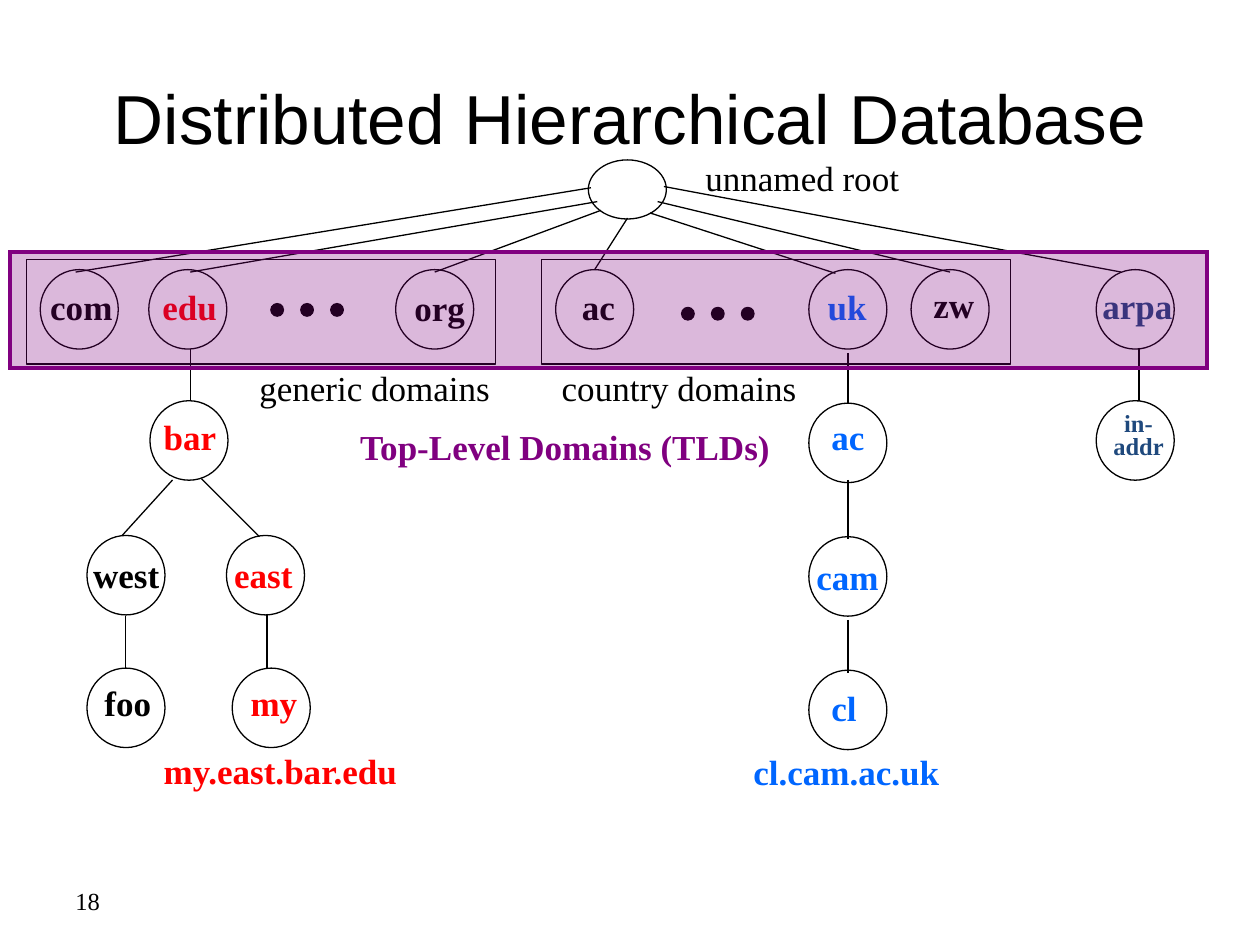
import lxml.etree
import pptx
import pptx.dml.color
import pptx.enum.shapes
import pptx.enum.text
import pptx.oxml.ns
import pptx.util

Pt = pptx.util.Pt
SHAPE = pptx.enum.shapes.MSO_SHAPE
ALIGN = pptx.enum.text.PP_ALIGN
ANCHOR = pptx.enum.text.MSO_ANCHOR
FIT = pptx.enum.text.MSO_AUTO_SIZE

COLORS = {
    "black": "000000",
    "red": "FF0000",
    "blue": "0066FF",
    "navy": "1F497D",
    "purple": "800080",
}

BODY = {"name": "Times New Roman", "size": Pt(20), "bold": False}
BOLD = {**BODY, "bold": True}
SMALL = {**BODY, "size": Pt(14)}
SMALL_BOLD = {**BOLD, "size": Pt(14)}
TITLE = {"name": "Arial", "size": Pt(39.6), "bold": False}
CENTER = {"alignment": ALIGN.CENTER}
TIGHT = {"alignment": ALIGN.CENTER, "line_spacing": 0.8}
FIXED = {"word_wrap": True, "vertical_anchor": ANCHOR.MIDDLE}
GROW = {"word_wrap": False, "auto_size": FIT.SHAPE_TO_FIT_TEXT}

NODE_W, NODE_H = 44.6, 45.4
LABEL_H = 31
TLD_Y = 154.1
UK_X, UK_Y, UK_STEP = 462.2, 230.4, 76.3
DOT, DOT_STEP = 7.2, 17.1

NODES = [
    ("com", "black", 23, TLD_Y, 21.6, 159.8, 51),
    ("edu", "red", 85, TLD_Y, 85.7, 159.8, 45.4),
    ("org", "black", 226.1, TLD_Y, 229.7, 160.2, 43.9),
    ("ac", "black", 317.5, TLD_Y, 325.4, 159.8, 33.1),
    ("uk", "blue", UK_X, TLD_Y, 465.8, 159.8, 36.7),
    ("zw", "black", 520.6, TLD_Y, 526.3, 158.4, 38.2),
    ("arpa", "navy", 626.4, TLD_Y, 622.8, 159.1, 54.7),
    ("bar", "red", 85.7, 229, 86.4, 234, 44.6),
    ("west", "black", 49.7, 306, 46.1, 312.5, 54),
    ("east", "red", 129.4, 306, 126.7, 312.5, 49),
    ("foo", "black", 49.7, 381.8, 52.6, 385.9, 41),
    ("my", "red", 132.7, 381.8, 136.1, 385.9, 41.8),
    ("ac", "blue", UK_X, UK_Y, 468, 234, 33.1),
    ("cam", "blue", UK_X, UK_Y + UK_STEP, 459.4, 313.9, 51),
    ("cl", "blue", UK_X, UK_Y + 2 * UK_STEP, 468, 388.8, 28.8),
]

BRANCHES = [
    (337.7, 107.3, 43.2, 155.5),
    (341.3, 115.2, 108.7, 155.5),
    (343.4, 120.2, 248.4, 155.5),
    (358.6, 124.6, 339.8, 154.1),
    (379.4, 106.6, 640.8, 155.5),
    (375.8, 115.2, 542.9, 155.5),
    (371.5, 121.7, 477.4, 156.2),
    (108.7, 199.4, 108.7, 229),
    (98.6, 274.3, 69.8, 306),
    (115.2, 273.6, 148.3, 306.7),
    (71.8, 352.1, 71.8, 382),
    (152.6, 350.6, 152.6, 382),
    (484.6, 201.6, 484.6, 230.4),
    (484.6, 274.3, 484.6, 308.2),
    (484.6, 354.2, 484.6, 384.5),
    (650.9, 198.7, 650.9, 229),
]

CAPTIONS = [
    ("unnamed root", "black", 396, 85.7, 125.3, BODY),
    ("generic domains", "black", 141.1, 205.9, 146.2, BODY),
    ("country domains", "black", 313.9, 205.9, 148.3, BODY),
    ("my.east.bar.edu", "red", 86.4, 424.8, 150.5, BOLD),
    ("cl.cam.ac.uk", "blue", 423.4, 425.5, 121.7, BOLD),
]


def rgb(color):
    return pptx.dml.color.RGBColor.from_string(COLORS[color])


def apply(obj, values):
    for name, value in values.items():
        setattr(obj, name, value)


def add_text(s, lines, color, box, font, para={}, frame=GROW):
    tf = s.shapes.add_textbox(*map(Pt, box)).text_frame
    apply(tf, frame)
    for i, line in enumerate(lines):
        p = tf.add_paragraph() if i else tf.paragraphs[0]
        apply(p, para)
        r = p.add_run()
        r.text = line
        apply(r.font, font)
        r.font.color.rgb = rgb(color)


def add_outline(shapes, kind, box, fill=None, line="black", width=0.75):
    sp = shapes.add_shape(kind, *map(Pt, box))
    sp.shadow.inherit = False
    if fill:
        sp.fill.solid()
        sp.fill.fore_color.rgb = rgb(fill)
    else:
        sp.fill.background()
    sp.line.color.rgb = rgb(line)
    sp.line.width = Pt(width)
    return sp


def add_node(s, label, color, x, y, label_x, label_y, label_w):
    add_outline(s.shapes, SHAPE.OVAL, (x, y, NODE_W, NODE_H))
    add_text(s, [label], color, (label_x, label_y, label_w, LABEL_H), BOLD)


def add_dots(s, x, y):
    group = s.shapes.add_group_shape()
    for i in range(3):
        add_outline(group.shapes, SHAPE.OVAL, (x + i * DOT_STEP, y, DOT, DOT), "black")


def add_branch(s, ends):
    line = s.shapes.add_connector(
        pptx.enum.shapes.MSO_CONNECTOR.STRAIGHT, *map(Pt, ends))
    line.line.color.rgb = rgb("black")
    line.line.width = Pt(0.75)
    lxml.etree.SubElement(line._element.spPr, pptx.oxml.ns.qn("a:effectLst"))


def add_band(s, box, percent):
    sp = add_outline(s.shapes, SHAPE.RECTANGLE, box, "purple", "purple", 2)
    qn = pptx.oxml.ns.qn
    spPr = sp._element.spPr
    color = spPr.find(qn("a:solidFill")).find(qn("a:srgbClr"))
    lxml.etree.SubElement(color, qn("a:alpha")).set("val", str(percent * 1000))
    lxml.etree.SubElement(spPr.find(qn("a:ln")), qn("a:miter")).set("lim", "800000")


def main():
    prs = pptx.Presentation()
    prs.slide_width, prs.slide_height = Pt(720), Pt(540)
    s = prs.slides.add_slide(prs.slide_layouts[6])

    add_text(s, ["18"], "black", (36, 500.4, 168, 28.8), SMALL, frame=FIXED)
    add_text(s, ["Distributed Hierarchical Database"], "black",
             (36, 21.6, 648, 90), TITLE, CENTER, FIXED)

    for x in (15.1, 309.6):
        add_outline(s.shapes, SHAPE.RECTANGLE, (x, 148.3, 268, 59.8))
    add_outline(s.shapes, SHAPE.OVAL, (336.2, 91.4, NODE_W, 33.8))
    for node in NODES:
        add_node(s, *node)
    add_outline(s.shapes, SHAPE.OVAL, (626.4, 229, NODE_W, NODE_H))
    add_text(s, ["in-", "addr"], "navy", (628.6, 232.6, 43.9, 35.3), SMALL_BOLD, TIGHT)
    add_dots(s, 154.8, 173.5)
    add_dots(s, 389.5, 175.7)
    for ends in BRANCHES:
        add_branch(s, ends)
    for text, color, x, y, w, font in CAPTIONS:
        add_text(s, [text], color, (x, y, w, LABEL_H), font)

    add_band(s, (5.8, 144, 684, 66.2), 28)
    add_text(s, ["Top-Level Domains (TLDs)"], "purple",
             (198, 239.8, 249.8, LABEL_H), BOLD, CENTER,
             {**GROW, "vertical_anchor": ANCHOR.MIDDLE})

    prs.save("out.pptx")


if __name__ == "__main__":
    main()
